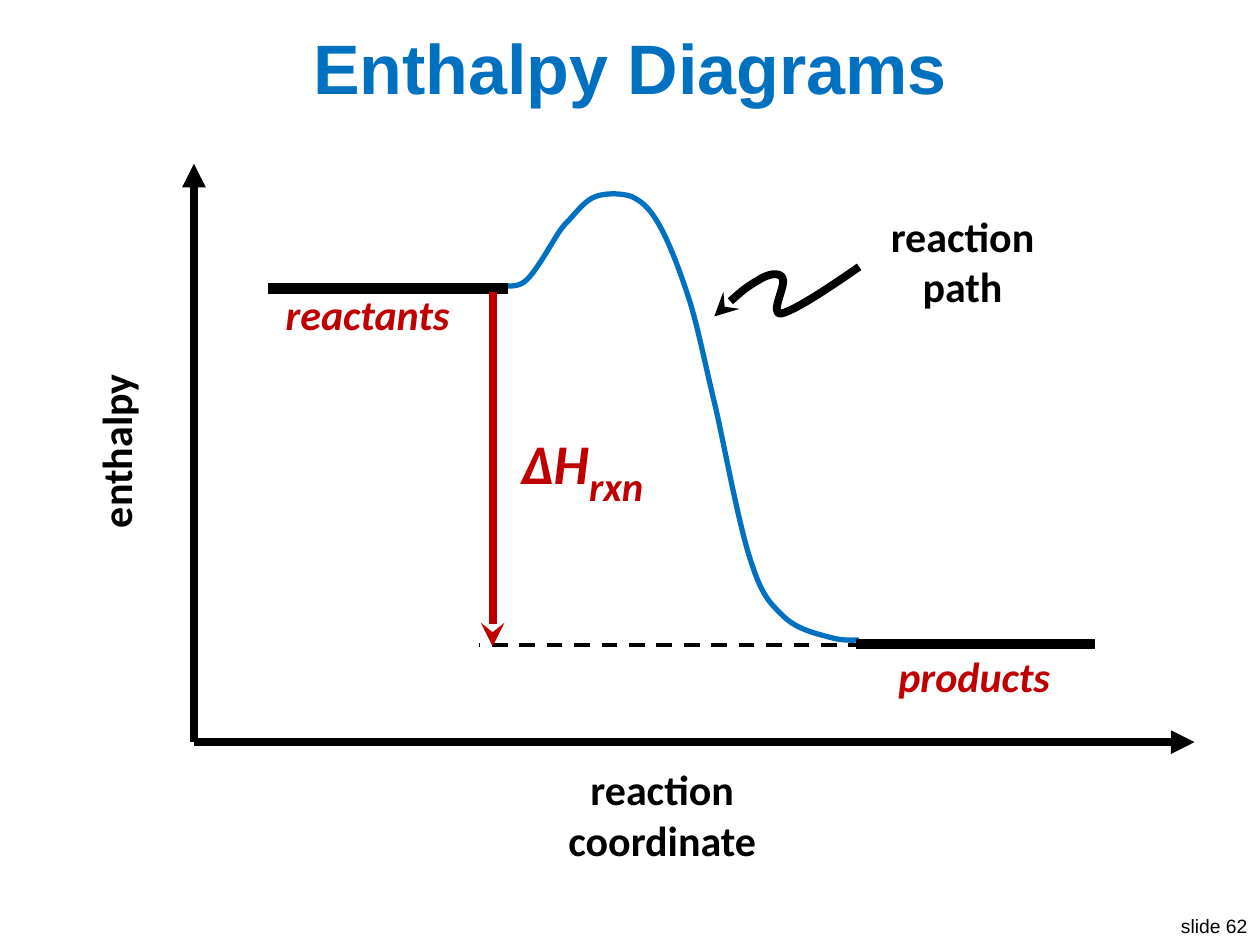
"""Draw an enthalpy diagram slide with axes, reaction curve and labels."""
from dataclasses import dataclass

import lxml.etree
import pptx
import pptx.dml.color
import pptx.enum.dml
import pptx.enum.text
import pptx.oxml.ns
import pptx.util

Cm = pptx.util.Cm
Pt = pptx.util.Pt
qn = pptx.oxml.ns.qn
Align = pptx.enum.text.PP_ALIGN
Anchor = pptx.enum.text.MSO_ANCHOR
Dash = pptx.enum.dml.MSO_LINE

BLACK, BLUE, RED = "000000", "0070C0", "C00000"


@dataclass
class Run:
    text: str
    size: float = 24
    drop: int = 0


@dataclass
class Label:
    box: tuple
    lines: list
    color: str = BLACK
    align: Align = Align.CENTER
    font: str = "Calibri"
    bold: bool = True
    slant: bool = False
    wrap: bool = False
    anchor: Anchor = Anchor.TOP
    turn: float = 0


@dataclass
class Stroke:
    start: tuple
    end: tuple
    width: float
    color: str = BLACK
    dash: Dash | None = None
    head: str = ""
    tail: str = ""


@dataclass
class Curve:
    points: list
    width: float
    color: str
    head: str = ""


CURVES = [
    Curve([(10.21, 5.77),
           (10.34, 5.77), (10.49, 5.77), (10.62, 5.64),
           (10.77, 5.51), (11.07, 5), (11.07, 5),
           (11.2, 4.8), (11.28, 4.62), (11.46, 4.45),
           (11.61, 4.29), (11.79, 4.04), (12.01, 3.96),
           (12.22, 3.89), (12.5, 3.89), (12.73, 3.96),
           (12.93, 4.06), (13.08, 4.17), (13.28, 4.52),
           (13.49, 4.88), (13.72, 5.49), (13.92, 6.12),
           (14.1, 6.73), (14.22, 7.37), (14.43, 8.23),
           (14.63, 9.12), (14.91, 10.67), (15.16, 11.38),
           (15.39, 12.09), (15.57, 12.19), (15.82, 12.45),
           (16.1, 12.7), (16.48, 12.78), (16.74, 12.85),
           (16.99, 12.93), (17.32, 12.9), (17.32, 12.9)], 3, BLUE),
    Curve([(14.4, 6.38),
           (14.71, 6.07), (15.04, 5.79), (15.27, 5.66),
           (15.49, 5.51), (15.7, 5.49), (15.77, 5.59),
           (15.88, 5.72), (15.49, 6.35), (15.75, 6.32),
           (16, 6.27), (16.66, 5.84), (17.32, 5.38)], 4.5, BLACK, "stealth"),
]

ORIGIN = (3.91, 14.96)
STROKES = [
    Stroke((3.91, 3.3), ORIGIN, 4.5, head="triangle"),
    Stroke((24.08, 14.96), ORIGIN, 4.5, head="triangle"),
    Stroke((10.24, 5.82), (5.41, 5.82), 6),
    Stroke((22.07, 12.98), (17.25, 12.98), 6),
    Stroke((17.42, 13), (9.65, 13), 2.25, dash=Dash.DASH),
    Stroke((9.93, 5.89), (9.93, 13.03), 4.5, RED, tail="stealth"),
]

LABELS = [
    Label((23.5, 18.31, 1.9, 0.74), [[Run("slide 62", 11)]],
          align=Align.RIGHT, font="Arial", bold=False),
    Label((0.51, 0.33, 24.38, 2.03), [[Run("Enthalpy Diagrams", 40)]],
          BLUE, font="Arial", wrap=True, anchor=Anchor.MIDDLE),
    Label((5.51, 5.69, 3.86, 1.27), [[Run("reactants")]],
          RED, Align.LEFT, slant=True),
    Label((17.81, 12.98, 3.61, 1.27), [[Run("products")]],
          RED, Align.RIGHT, slant=True),
    Label((10.26, 8.23, 3.18, 1.63), [[Run("ΔH", 32), Run("rxn", 40, -25)]],
          RED, Align.LEFT, slant=True),
    Label((11.18, 15.27, 4.34, 2.31),
          [[Run("reaction")], [Run("coordinate")]]),
    Label((0.51, 8.46, 3.63, 1.27), [[Run("enthalpy")]], turn=270),
    Label((17.55, 4.11, 3.71, 2.31), [[Run("reaction path")]], wrap=True),
]


def paint(code: str) -> pptx.dml.color.RGBColor:
    return pptx.dml.color.RGBColor.from_string(code)


def ink(shape, color: str, width: float, dash=None, head="", tail="") -> None:
    line = shape.line
    line.width = Pt(width)
    line.fill.solid()
    line.fill.fore_color.rgb = paint(color)
    if dash:
        line.dash_style = dash
    props = shape._element.spPr
    for tag, kind in (("a:headEnd", head), ("a:tailEnd", tail)):
        if kind:
            lxml.etree.SubElement(props.find(qn("a:ln")), qn(tag), type=kind)
    if props.find(qn("a:effectLst")) is None:
        lxml.etree.SubElement(props, qn("a:effectLst"))


def add_curve(slide, curve: Curve) -> None:
    first, *rest = [(Cm(x), Cm(y)) for x, y in curve.points]
    pen = slide.shapes.build_freeform(*first)
    pen.add_line_segments(rest, close=False)
    shape = pen.convert_to_shape()
    shape.fill.background()
    legs = list(shape._element.iter(qn("a:lnTo")))
    for i in range(0, len(legs), 3):
        bend = lxml.etree.Element(qn("a:cubicBezTo"))
        legs[i].addprevious(bend)
        for leg in legs[i:i + 3]:
            bend.append(leg[0])
            leg.getparent().remove(leg)
    ink(shape, curve.color, curve.width, head=curve.head)


def add_stroke(slide, item: Stroke) -> None:
    ends = [Cm(v) for v in item.start + item.end]
    shape = slide.shapes.add_connector(
        pptx.enum.shapes.MSO_CONNECTOR.STRAIGHT, *ends)
    ink(shape, item.color, item.width, item.dash, item.head, item.tail)


def add_label(slide, label: Label) -> None:
    shape = slide.shapes.add_textbox(*[Cm(v) for v in label.box])
    shape.rotation = label.turn
    frame = shape.text_frame
    frame.word_wrap = label.wrap
    frame.vertical_anchor = label.anchor
    for i, line in enumerate(label.lines):
        para = frame.add_paragraph() if i else frame.paragraphs[0]
        para.alignment = label.align
        for part in line:
            run = para.add_run()
            run.text = part.text
            font = run.font
            font.name, font.size = label.font, Pt(part.size)
            font.bold, font.italic = label.bold, label.slant
            font.color.rgb = paint(label.color)
            if part.drop:
                run._r.get_or_add_rPr().set("baseline", str(part.drop * 1000))


def main() -> None:
    deck = pptx.Presentation()
    deck.slide_width, deck.slide_height = Cm(25.4), Cm(19.05)
    slide = deck.slides.add_slide(deck.slide_layouts[6])
    for curve in CURVES:
        add_curve(slide, curve)
    for item in STROKES:
        add_stroke(slide, item)
    for label in LABELS:
        add_label(slide, label)
    deck.save("out.pptx")


if __name__ == "__main__":
    main()
